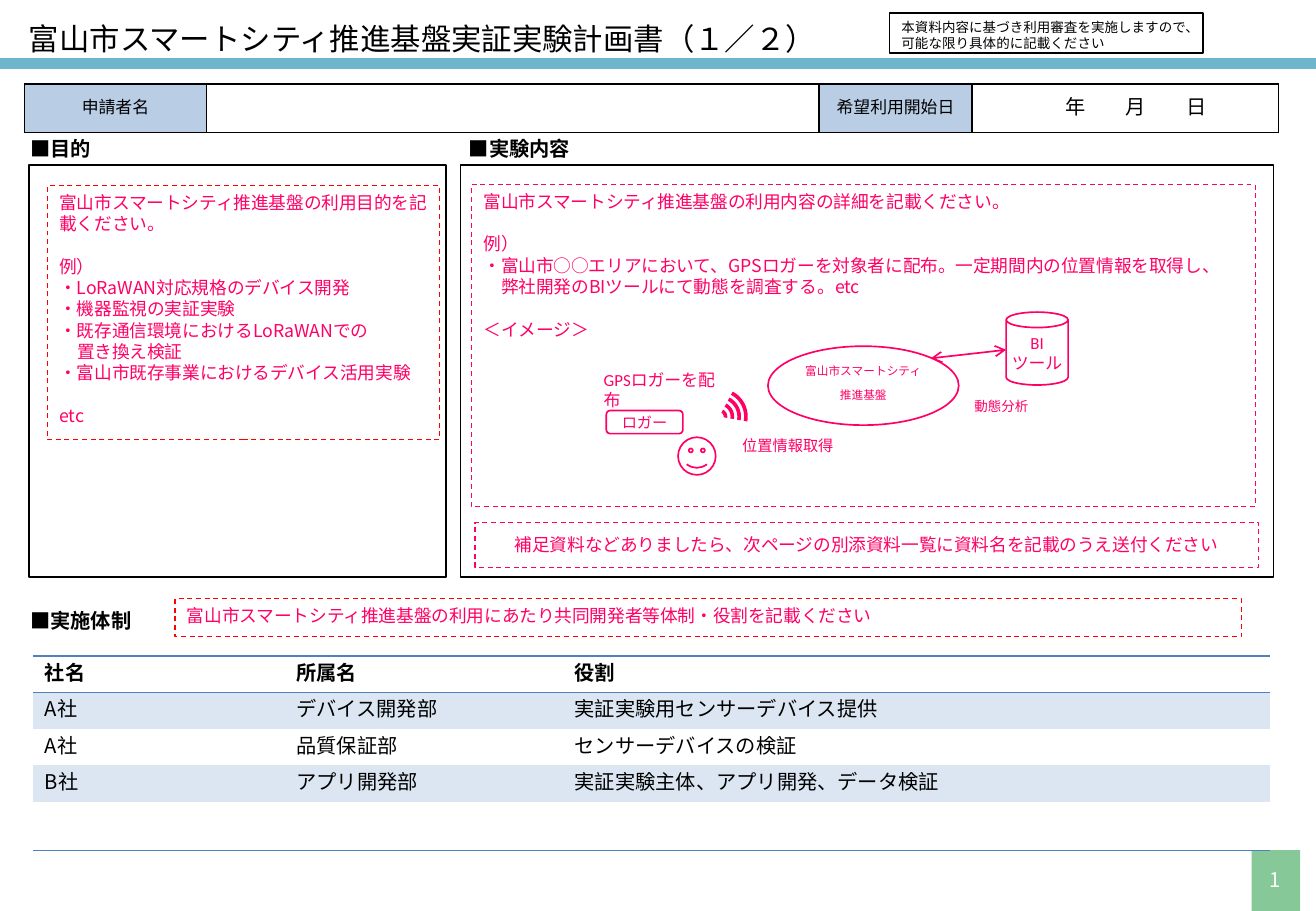
from math import cos, radians, sin

from lxml.etree import SubElement
from pptx import Presentation
from pptx.dml.color import RGBColor
from pptx.enum.dml import MSO_LINE
from pptx.enum.shapes import MSO_CONNECTOR, MSO_SHAPE as SHAPE
from pptx.enum.text import MSO_ANCHOR as ANCHOR, PP_ALIGN as ALIGN
from pptx.oxml.ns import qn
from pptx.util import Inches, Pt

BLACK, WHITE = RGBColor(0, 0, 0), RGBColor(255, 255, 255)
RED, PINK = RGBColor(0xFF, 0, 0), RGBColor(0xFF, 0, 0x66)
TEAL, GREEN = RGBColor(0x6E, 0xB5, 0xCE), RGBColor(0x87, 0xC8, 0x98)
LABEL_BLUE, BAND_BLUE = RGBColor(0xB9, 0xCD, 0xE5), RGBColor(0xDC, 0xE6, 0xF2)
RULE_BLUE = RGBColor(0x4F, 0x81, 0xBD)
GOTHIC, CALIBRI = "Noto Sans CJK JP", "Calibri"
NO_STYLE = "{2D5ABB26-0587-4C30-8999-92F81FD0307C}"

prs = Presentation()
prs.slide_width, prs.slide_height = Inches(10.83), Inches(7.5)
s = prs.slides.add_slide(prs.slide_layouts[6])
CELL = prs.slide_height / 90  # the slide is a grid of 130 columns by 90 rows


def write(tf, *lines, size=10.5, font=GOTHIC, color=BLACK, bold=False, align=ALIGN.LEFT,
          anchor=ANCHOR.TOP, wrap=True, gaps=(), indents=(), tabs=(), raised=False):
    """gaps and indents list the paragraphs that follow an open line or are indented."""
    tf.word_wrap, tf.vertical_anchor = wrap, anchor
    for i, line in enumerate(lines):
        p = tf.add_paragraph() if i else tf.paragraphs[0]
        p.alignment, p.line_spacing = align, Pt(size * 1.2)
        if i in gaps:
            p.space_before = Pt(size * 1.2)
        pPr = p._p.get_or_add_pPr()
        if i in indents:
            pPr.set("marL", str(Pt(size)))
        if tabs:
            stops = SubElement(pPr, qn("a:tabLst"))
            for tab in tabs:
                SubElement(stops, qn("a:tab"), pos=str(int(tab * CELL)), algn="l")
        if not line:
            continue
        r = p.add_run()
        r.text = line
        f = r.font
        f.size, f.name, f.bold, f.color.rgb = Pt(size), font, bold, color
        rPr = r._r.get_or_add_rPr()
        SubElement(rPr, qn("a:ea"), typeface=GOTHIC)
        if raised:
            rPr.set("baseline", "30000")


def box(kind, x, y, w, h, line=None, width=1, dash=False, fill=None):
    """Adds a preset shape, or a text box if kind is None; lengths are in cells."""
    place = [int(v * CELL) for v in (x, y, w, h)]
    if kind is None:
        return s.shapes.add_textbox(*place)
    sp = s.shapes.add_shape(kind, *place)
    sp.shadow.inherit = False
    if fill is None:
        sp.fill.background()
    else:
        sp.fill.solid()
        sp.fill.fore_color.rgb = fill
    if line is None:
        sp.line.fill.background()
    else:
        sp.line.color.rgb, sp.line.width = line, Pt(width)
        if dash:
            sp.line.dash_style = MSO_LINE.DASH
    return sp


# Header and page number
box(SHAPE.RECTANGLE, 123.6, 84, 4.8, 6, fill=GREEN)
page = box(None, 123.48, 84.48, 4.8, 4.8).text_frame
page.margin_left = page.margin_right = page.margin_top = page.margin_bottom = 0
write(page, "1", size=12, color=WHITE, align=ALIGN.CENTER, anchor=ANCHOR.MIDDLE)
write(box(None, 1.68, 1.44, 81.24, 4.8).text_frame,
      "富山市スマートシティ推進基盤実証実験計画書（１／２）",
      size=18, anchor=ANCHOR.MIDDLE, wrap=False)
notice = box(SHAPE.RECTANGLE, 87.84, 1.32, 30.96, 3.96, BLACK).text_frame
notice.margin_top = Inches(0.08)
write(notice, "本資料内容に基づき利用審査を実施しますので、可能な限り具体的に記載ください",
      size=8, anchor=ANCHOR.MIDDLE)

# Section headings and frames
for x, y, heading in ((1.8, 12.84, "■目的"), (45.12, 12.84, "■実験内容"),
                      (1.8, 59.52, "■実施体制")):
    write(box(None, x, y, 12.5, 3.6).text_frame, heading, size=12, bold=True, wrap=False)
for x, w in ((2.88, 41.16), (45.48, 80.28)):
    box(SHAPE.RECTANGLE, x, 16.32, w, 40.68, BLACK)

# Guidance in dashed boxes
guides = [
    ((4.68, 18.36, 38.76, 25.08), RED, dict(gaps=(1, 7), indents=(5,)),
     ["富山市スマートシティ推進基盤の利用目的を記載ください。", "例）",
      "・LoRaWAN対応規格のデバイス開発", "・機器監視の実証実験",
      "・既存通信環境におけるLoRaWANでの", "置き換え検証",
      "・富山市既存事業におけるデバイス活用実験", "etc"]),
    ((46.56, 18.24, 77.4, 31.8), PINK, dict(gaps=(1, 4), indents=(3,)),
     ["富山市スマートシティ推進基盤の利用内容の詳細を記載ください。", "例）",
      "・富山市○○エリアにおいて、GPSロガーを対象者に配布。一定期間内の位置情報を取得し、",
      "弊社開発のBIツールにて動態を調査する。etc", "＜イメージ＞"]),
    ((17.28, 59.16, 105.36, 3.72), RED, {},
     ["富山市スマートシティ推進基盤の利用にあたり共同開発者等体制・役割を記載ください"]),
    ((46.92, 51.6, 77.4, 4.44), PINK, dict(align=ALIGN.CENTER, anchor=ANCHOR.MIDDLE),
     ["補足資料などありましたら、次ページの別添資料一覧に資料名を記載のうえ送付ください"]),
]
for place, line, form, lines in guides:
    sp = box(SHAPE.RECTANGLE, *place, line, 0.75, dash=True)
    write(sp.text_frame, *lines, color=PINK, **form)

# Diagram of the experiment
pink = dict(font=CALIBRI, color=PINK)
middle = dict(align=ALIGN.CENTER, anchor=ANCHOR.MIDDLE, **pink)
platform = box(SHAPE.OVAL, 75.84, 34.2, 18.84, 7.8, PINK).text_frame
platform.margin_left = platform.margin_right = 0
write(platform, "富山市スマートシティ", "推進基盤", size=12, raised=True, **middle)
write(box(SHAPE.CAN, 99.36, 30.84, 6.12, 7.2, PINK).text_frame,
      "BI", "ツール", size=10, wrap=False, **middle)
write(box(SHAPE.ROUNDED_RECTANGLE, 59.88, 40.56, 7.56, 2.28, PINK).text_frame,
      "ロガー", size=9, **middle)
box(SHAPE.SMILEY_FACE, 66.96, 43.2, 3.72, 3.72, PINK)
for x, y, w, size, wrap, label in ((58.44, 35.88, 14.52, 10, True, "GPSロガーを配布"),
                                   (95.04, 38.76, 7.8, 8, False, "動態分析"),
                                   (72.12, 42.48, 11.52, 9, False, "位置情報取得")):
    write(box(None, x, y, w, 3).text_frame, label, size=size, wrap=wrap, **pink)

for x1, y1, x2, y2, color, width, ends in (
        (0, 6.24, 130, 6.24, TEAL, 6.5, ()),
        (91.92, 35.4, 99.36, 34.56, PINK, 1, ("a:headEnd", "a:tailEnd"))):
    c = s.shapes.add_connector(MSO_CONNECTOR.STRAIGHT,
                               *[int(v * CELL) for v in (x1, y1, x2, y2)])
    c.line.color.rgb, c.line.width = color, Pt(width)
    spPr = c._element.spPr
    for end in ends:
        SubElement(spPr.find(qn("a:ln")), qn(end), type="arrow")
    SubElement(spPr, qn("a:effectLst"))

# Radio waves: four bands around one centre
waves = None
for radius in (0.6, 1.28, 1.95, 2.62):
    edge = [(radius + 0.18, a) for a in range(-62, 11, 6)]
    edge += [(radius - 0.18, a) for a in range(10, -63, -6)]
    points = [(int((71.04 + d * cos(radians(a))) * CELL),
               int((41.16 + d * sin(radians(a))) * CELL)) for d, a in edge]
    if waves is None:
        waves = s.shapes.build_freeform(*points[0])
    else:
        waves.move_to(*points[0])
    waves.add_line_segments(points[1:], close=True)
signal = waves.convert_to_shape()
signal.shadow.inherit = False
signal.fill.solid()
signal.fill.fore_color.rgb = PINK
signal.line.fill.background()

# Applicant form and table of members
applicant = [["申請者名", "", "希望利用開始日", "\t年\t月\t日"]]
members = [["社名", "所属名", "役割"],
           ["A社", "デバイス開発部", "実証実験用センサーデバイス提供"],
           ["A社", "品質保証部", "センサーデバイスの検証"],
           ["B社", "アプリ開発部", "実証実験主体、アプリ開発、データ検証"],
           ["", "", ""]]
for x, y, widths, rows, rule in (
        (2.4, 8.28, (18, 60.48, 15.12, 30.24), applicant, BLACK),
        (3.24, 64.8, (24.84, 27.48, 69.84), members, RULE_BLUE)):
    is_form = rows is applicant
    table = s.shapes.add_table(len(rows), len(widths), *[int(v * CELL) for v in (
        x, y, sum(widths), 3.6 * len(rows))]).table
    table.first_row = table.horz_banding = False
    table._tbl.tblPr.find(qn("a:tableStyleId")).text = NO_STYLE
    for column, w in zip(table.columns, widths):
        column.width = int(w * CELL)
    for i, row in enumerate(rows):
        sides = "LRTB" if is_form else "TB" if i == 0 else "B" if i == len(rows) - 1 else ""
        for j, value in enumerate(row):
            cell = table.cell(i, j)
            for side in sides:
                ln = SubElement(cell._tc.get_or_add_tcPr(), qn("a:ln" + side), w=str(Pt(1)))
                SubElement(SubElement(ln, qn("a:solidFill")), qn("a:srgbClr"), val=str(rule))
            is_label = is_form and j in (0, 2)
            if is_form or i in (1, 3):
                cell.fill.solid()
                cell.fill.fore_color.rgb = (LABEL_BLUE if is_label else
                                            WHITE if is_form else BAND_BLUE)
            else:
                cell.fill.background()
            cell.vertical_anchor = ANCHOR.MIDDLE if is_form else ANCHOR.TOP
            write(cell.text_frame, value, size=10 if is_label else 12,
                  bold=not is_form and i == 0,
                  align=ALIGN.CENTER if is_label else ALIGN.LEFT,
                  tabs=(8, 14, 20) if "\t" in value else ())

prs.save("out.pptx")
